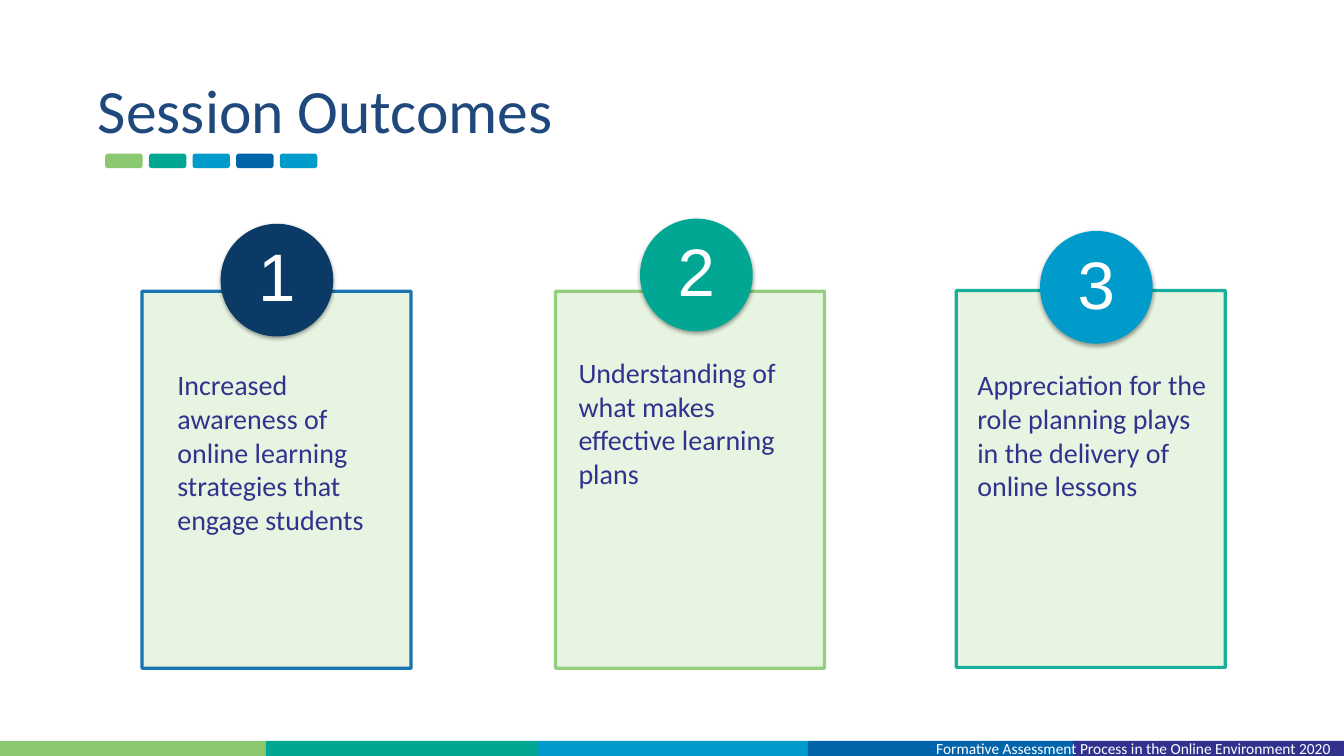
from dataclasses import dataclass

import lxml.etree
import pptx
import pptx.dml.color
import pptx.enum.shapes
import pptx.enum.text
import pptx.oxml.ns
import pptx.util

Cm = pptx.util.Cm
Shape = pptx.enum.shapes.MSO_SHAPE
Align = pptx.enum.text.PP_ALIGN
Anchor = pptx.enum.text.MSO_ANCHOR
qn = pptx.oxml.ns.qn


@dataclass(frozen=True)
class Theme:
    green: str = "8AC971"
    teal: str = "01A793"
    sky: str = "019BCB"
    blue: str = "0265AC"
    indigo: str = "31328D"
    navy: str = "0B3A66"
    title: str = "1F497D"
    panel: str = "E7F4E1"
    white: str = "FFFFFF"
    font: str = "Calibri"
    number_font: str = "Arial"
    title_size: int = 44
    number_size: int = 48
    body_size: int = 20
    footer_size: int = 11


def rgb(value):
    return pptx.dml.color.RGBColor.from_string(value)


def write(tf, text, *, font, size, color, align=Align.LEFT,
          anchor=Anchor.TOP, margins=(0.13, 0.13), spacing=None):
    tf.word_wrap = True
    tf.vertical_anchor = anchor
    tf.margin_left = tf.margin_right = Cm(margins[0])
    tf.margin_top = tf.margin_bottom = Cm(margins[1])
    p = tf.paragraphs[0]
    p.alignment = align
    p.line_spacing = spacing
    r = p.add_run()
    r.text = text
    r.font.name = font
    r.font.size = pptx.util.Pt(size)
    r.font.color.rgb = rgb(color)


class Deck:
    def __init__(self, theme, width, height):
        self.theme = theme
        self.prs = pptx.Presentation()
        self.prs.slide_width = Cm(width)
        self.prs.slide_height = Cm(height)
        self.s = self.prs.slides.add_slide(self.prs.slide_layouts[6])

    def shape(self, kind, box, fill, line=None, weight=1):
        sp = self.s.shapes.add_shape(kind, *map(Cm, box))
        sp.shadow.inherit = False
        sp.fill.solid()
        sp.fill.fore_color.rgb = rgb(fill)
        if line:
            sp.line.color.rgb = rgb(line)
            sp.line.width = pptx.util.Pt(weight)
        else:
            sp.line.fill.background()
        return sp

    def text(self, box, text, **style):
        sp = self.s.shapes.add_textbox(*map(Cm, box))
        write(sp.text_frame, text, **style)

    def panel(self, left, top, line):
        sp = self.shape(Shape.RECTANGLE, (left, top, 6.78, 9.5),
                        self.theme.panel, line, 2.25)
        color = next(sp.line._ln.iter(qn("a:srgbClr")))
        lxml.etree.SubElement(color, qn("a:alpha"), val="89000")

    def badge(self, left, top, number, fill):
        sp = self.shape(Shape.OVAL, (left, top, 2.84, 2.84), fill)
        effects = sp._element.spPr.find(qn("a:effectLst"))
        shadow = lxml.etree.SubElement(
            effects, qn("a:outerShdw"), blurRad=str(pptx.util.Pt(3.1)),
            dist=str(pptx.util.Pt(1.6)), dir="5400000", rotWithShape="0")
        color = lxml.etree.SubElement(shadow, qn("a:srgbClr"), val="000000")
        lxml.etree.SubElement(color, qn("a:alpha"), val="37000")
        write(sp.text_frame, number, font=self.theme.number_font,
              size=self.theme.number_size, color=self.theme.white,
              align=Align.CENTER, anchor=Anchor.MIDDLE,
              margins=(0.23, 0.03), spacing=0.9)


def main():
    t = Theme()
    width, height = 33.87, 19.05
    deck = Deck(t, width, height)

    bar_width, bar_height = 6.83, 0.38
    for i, color in enumerate((t.green, t.teal, t.sky, t.blue, t.indigo)):
        left = min(i * bar_width - 0.13, width - bar_width)
        deck.shape(Shape.RECTANGLE,
                   (left, height - bar_height, bar_width, bar_height), color)
    deck.text((23.34, 18.52, 10.46, 0.69),
              "Formative Assessment Process in the Online Environment 2020",
              font=t.font, size=t.footer_size, color=t.white,
              align=Align.CENTER, anchor=Anchor.MIDDLE)

    for i, color in enumerate((t.green, t.teal, t.sky, t.blue, t.sky)):
        deck.shape(Shape.ROUNDED_RECTANGLE,
                   (2.67 + i * 1.1, 3.89, 0.91, 0.33), color, color)
    deck.text((2.34, 1.02, 29.21, 3.68), "Session Outcomes", font=t.font,
              size=t.title_size, color=t.title, anchor=Anchor.MIDDLE,
              spacing=0.9)

    outcomes = (
        ((3.58, 7.34), t.blue, (5.56, 5.64), t.navy, (4.22, 9.14, 6.02, 4.88),
         "Increased awareness of online learning strategies that engage students"),
        ((14.0, 7.34), t.green, (16.13, 5.51), t.teal, (14.33, 8.83, 5.97, 6.15),
         "Understanding of what makes effective learning plans"),
        ((24.1, 7.32), t.teal, (26.21, 5.82), t.sky, (24.38, 9.14, 6.5, 7.19),
         "Appreciation for the role planning plays in the delivery of online lessons"),
    )
    for i, (panel, line, badge, fill, box, text) in enumerate(outcomes, 1):
        deck.panel(*panel, line)
        deck.text(box, text, font=t.font, size=t.body_size, color=t.indigo,
                  margins=(0.25, 0.13))
        deck.badge(*badge, str(i), fill)

    deck.prs.save("out.pptx")


if __name__ == "__main__":
    main()
